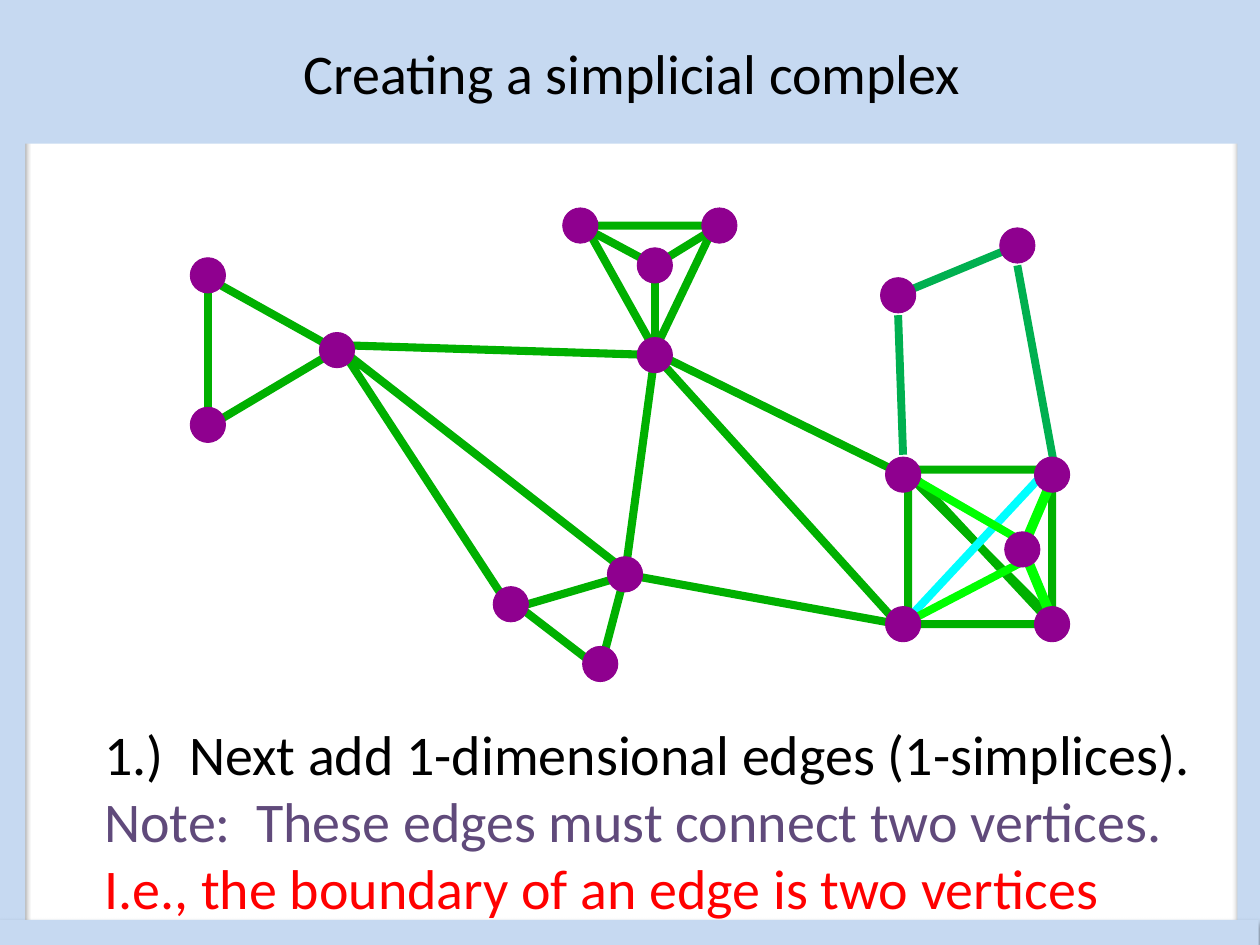
from collections import namedtuple

from lxml import etree
from pptx import Presentation
from pptx.dml.color import RGBColor
from pptx.enum.shapes import MSO_CONNECTOR, MSO_SHAPE
from pptx.enum.text import MSO_ANCHOR, MSO_AUTO_SIZE, PP_ALIGN
from pptx.oxml import parse_xml
from pptx.oxml.ns import nsdecls, qn
from pptx.util import Inches, Pt

PALE_BLUE = RGBColor(0xC6, 0xD9, 0xF1)
WHITE = RGBColor(0xFF, 0xFF, 0xFF)
BLACK = RGBColor(0x00, 0x00, 0x00)
VIOLET = RGBColor(0x60, 0x4A, 0x7B)
RED = RGBColor(0xFF, 0x00, 0x00)
PURPLE = RGBColor(0x8F, 0x00, 0x8F)
GREEN = RGBColor(0x00, 0xB0, 0x00)
SEA_GREEN = RGBColor(0x00, 0xB0, 0x50)
LIME = RGBColor(0x00, 0xFF, 0x00)
CYAN = RGBColor(0x00, 0xFF, 0xFF)

FONT = "Calibri"
TEXT_SIZE = 32
EDGE_WIDTH = 4.63

Box = namedtuple("Box", "left top width height")
SLIDE = Box(0, 0, 10, 7.5)
TITLE = Box(0.02, 0, 10, 1.14)
NOTES = Box(0.73, 5.66, 9.3, 1.72)
COMPLEX = Box(1.65, 1.79, 6.7, 3.48)

# The complex lies on a grid; every point below is (column, row)
COLUMNS, ROWS = 170, 88
VERTEX_SIZE = 0.28
VERTICES = [
    (170, 80), (140, 80), (90, 8), (139, 14), (163, 4), (84, 70), (61, 76),
    (79, 88), (140, 50), (164, 65), (170, 50), (26, 25), (0, 40), (103, 0),
    (90, 26), (75, 0), (0, 10),
]
ARMS = [
    ((163, 8), (170.5, 48.5)),
    ((163, 4), (140, 13.5)),
    ((139, 18), (140, 46)),
]
# Each layer: colour, line width, paths as (points, closed)
EDGE_LAYERS = [
    (GREEN, EDGE_WIDTH, [
        ([(141, 50), (141, 80), (171, 80)], True),
        ([(141, 49), (170, 49), (170, 80)], True),
    ]),
    (LIME, 5.63, [
        ([(170, 51), (164, 65)], False),
        ([(165, 67), (170, 79)], False),
    ]),
    (CYAN, EDGE_WIDTH, [([(169, 49), (140, 80)], False)]),
    (GREEN, EDGE_WIDTH, [([(90, 25), (102, 0), (76, 0)], True)]),
    (LIME, EDGE_WIDTH, [
        ([(165, 64), (139, 49)], False),
        ([(165, 67), (140, 80)], False),
    ]),
    (GREEN, EDGE_WIDTH, [
        ([(75, 0), (90, 8), (103, 0)], False),
        ([(90, 8), (90, 25)], False),
        ([(-1, 10), (26, 25), (-1, 41)], False),
        ([(27, 25), (61, 77), (85, 70)], True),
        ([(90, 26), (84, 70), (139, 80)], True),
        ([(90, 26), (26, 24)], False),
        ([(62, 76), (79, 89), (84, 70)], False),
        ([(0, 11), (0, 39)], False),
        ([(91, 26), (140, 50)], False),
    ]),
]


def add_panel(shapes, kind, box, fill):
    panel = shapes.add_shape(kind, *(Inches(length) for length in box))
    panel.shadow.inherit = False
    panel.fill.solid()
    panel.fill.fore_color.rgb = fill
    panel.line.fill.background()
    return panel


def add_soft_shadow(shape):
    effects = shape._element.spPr.find(qn("a:effectLst"))
    effects.append(parse_xml(
        f'<a:outerShdw {nsdecls("a")} blurRad="40000" dist="23000" '
        'dir="5400000" rotWithShape="0"><a:srgbClr val="000000">'
        '<a:alpha val="35000"/></a:srgbClr></a:outerShdw>'))


def write_lines(frame, lines, align):
    frame.text = "\n".join(text for text, _ in lines)
    for para, (_, color) in zip(frame.paragraphs, lines):
        para.alignment = align
        for span in para.runs:
            span.font.name = FONT
            span.font.size = Pt(TEXT_SIZE)
            span.font.color.rgb = color


def draw_border(page, box, thickness=0.2):
    right = box.left + box.width - 0.18
    bottom = box.top + box.height - thickness
    bars = [
        (Box(box.left, box.top, thickness, box.height), True),
        (Box(right, box.top, thickness, box.height), True),
        (Box(box.left + 0.02, box.top, box.width, thickness), False),
        (Box(box.left - 0.01, bottom, box.width, thickness), True),
    ]
    border = page.shapes.add_group_shape()
    for bar_box, shaded in bars:
        bar = add_panel(border.shapes, MSO_SHAPE.RECTANGLE, bar_box, PALE_BLUE)
        if shaded:
            add_soft_shadow(bar)


def draw_title(page, box):
    banner = add_panel(page.shapes, MSO_SHAPE.RECTANGLE, box, PALE_BLUE)
    banner.text_frame.vertical_anchor = MSO_ANCHOR.MIDDLE
    write_lines(banner.text_frame, [("Creating a simplicial complex", BLACK)],
                PP_ALIGN.CENTER)


def draw_notes(page, box):
    notes = page.shapes.add_textbox(*(Inches(length) for length in box))
    notes.text_frame.word_wrap = True
    notes.text_frame.auto_size = MSO_AUTO_SIZE.SHAPE_TO_FIT_TEXT
    write_lines(notes.text_frame, [
        ("1.)  Next add 1-dimensional edges (1-simplices).", BLACK),
        ("Note:  These edges must connect two vertices.", VIOLET),
        ("I.e., the boundary of an edge is two vertices", RED),
    ], PP_ALIGN.LEFT)


def grid_point(box, point):
    column, row = point
    return (box.left + box.width * column / COLUMNS,
            box.top + box.height * row / ROWS)


def draw_arms(page, box):
    for start, end in ARMS:
        ends = grid_point(box, start) + grid_point(box, end)
        arm = page.shapes.add_connector(
            MSO_CONNECTOR.STRAIGHT, *(Inches(length) for length in ends))
        arm.line.color.rgb = SEA_GREEN
        arm.line.width = Pt(4.5)
        etree.SubElement(arm._element.spPr, qn("a:effectLst"))


def draw_edges(page, box):
    scale = (Inches(box.width) / COLUMNS, Inches(box.height) / ROWS)
    for color, width, paths in EDGE_LAYERS:
        builder = page.shapes.build_freeform(*paths[0][0][0], scale=scale)
        for index, (points, closed) in enumerate(paths):
            if index:
                builder.move_to(*points[0])
            builder.add_line_segments(points[1:], close=closed)
        edges = builder.convert_to_shape(Inches(box.left), Inches(box.top))
        edges.shadow.inherit = False
        edges.fill.background()
        edges.line.color.rgb = color
        edges.line.width = Pt(width)


def draw_vertices(page, box):
    for vertex in VERTICES:
        x, y = grid_point(box, vertex)
        dot_box = Box(x - VERTEX_SIZE / 2, y - VERTEX_SIZE / 2,
                      VERTEX_SIZE, VERTEX_SIZE)
        dot = add_panel(page.shapes, MSO_SHAPE.OVAL, dot_box, PURPLE)
        dot.line.color.rgb = PURPLE
        dot.line.width = Pt(0.5)


def main():
    deck = Presentation()
    deck.slide_width = Inches(SLIDE.width)
    deck.slide_height = Inches(SLIDE.height)
    page = deck.slides.add_slide(deck.slide_layouts[6])
    page.background.fill.solid()
    page.background.fill.fore_color.rgb = WHITE

    # Back to front
    draw_arms(page, COMPLEX)
    draw_border(page, SLIDE)
    draw_title(page, TITLE)
    draw_notes(page, NOTES)
    draw_edges(page, COMPLEX)
    draw_vertices(page, COMPLEX)
    deck.save("out.pptx")


if __name__ == "__main__":
    main()
